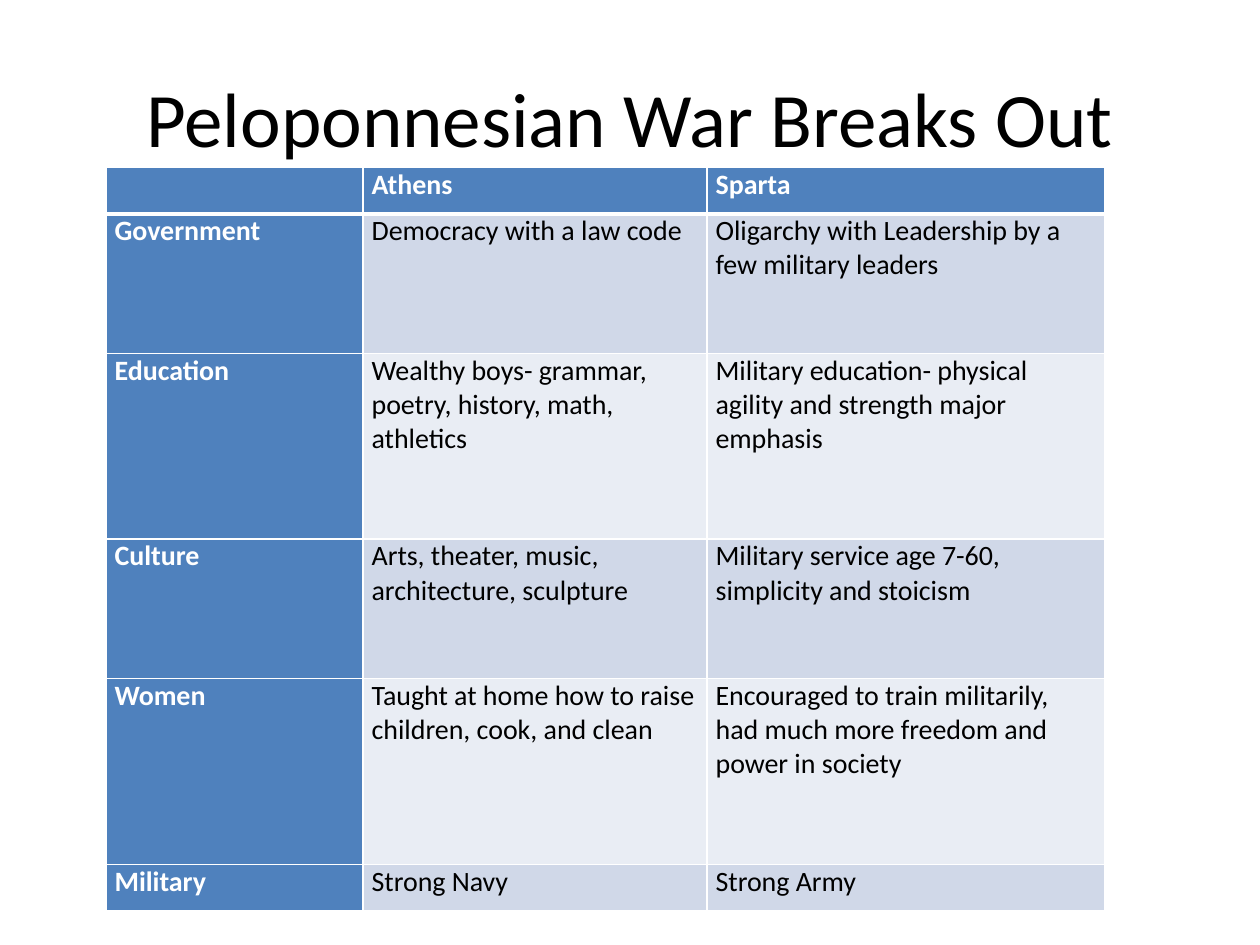
from dataclasses import dataclass

from lxml import etree
from pptx import Presentation
from pptx.dml.color import RGBColor
from pptx.enum.text import MSO_ANCHOR, PP_ALIGN
from pptx.oxml.ns import qn
from pptx.util import Inches, Pt

CENTER = PP_ALIGN.CENTER
MIDDLE = MSO_ANCHOR.MIDDLE
TITLE_ONLY = 5


@dataclass(frozen=True)
class Theme:
    """Colours, font and type sizes of the slide."""
    font: str = "Calibri"
    title_size: int = 44
    body_size: int = 16
    ink: str = "000000"
    paper: str = "FFFFFF"
    accent: str = "4F81BD"
    bands: tuple = ("D0D8E8", "E9EDF4")
    rule: int = 1
    header_rule: int = 3
    inset: float = 0.07


THEME = Theme()
TITLE_BOX = (0.5, 0.3, 9, 1.25)
TABLE_BOX = (0.84, 1.33, 7.93, 5.9)
COLUMN_WIDTHS = (2.04, 2.73, 3.16)
ROW_LINES = (1, 3, 4, 3, 4, 1)
COMPARISON = (
    ("", "Athens", "Sparta"),
    ("Government", "Democracy with a law code",
     "Oligarchy with Leadership by a few military leaders"),
    ("Education", "Wealthy boys- grammar, poetry, history, math, athletics",
     "Military education- physical agility and strength major emphasis"),
    ("Culture", "Arts, theater, music, architecture, sculpture",
     "Military service age 7-60, simplicity and stoicism"),
    ("Women", "Taught at home how to raise children, cook, and clean",
     "Encouraged to train militarily, had much more freedom and power in society"),
    ("Military", "Strong Navy", "Strong Army"),
)


def set_font(paragraph, size, color, bold=False):
    """Apply the theme font to a paragraph."""
    font = paragraph.font
    font.name, font.size, font.bold = THEME.font, Pt(size), bold
    font.color.rgb = RGBColor.from_string(color)


def set_borders(cell, top, bottom):
    """Draw the four cell edges with the given top and bottom weights."""
    properties = cell._tc.get_or_add_tcPr()
    weights = {"a:lnL": THEME.rule, "a:lnR": THEME.rule, "a:lnT": top, "a:lnB": bottom}
    for tag, weight in weights.items():
        line = etree.SubElement(properties, qn(tag), w=str(Pt(weight)))
        fill = etree.SubElement(line, qn("a:solidFill"))
        etree.SubElement(fill, qn("a:srgbClr"), val=THEME.paper)


def add_title(slide, box, text):
    """Place the slide title in its box."""
    title = slide.shapes.title
    title.left, title.top, title.width, title.height = map(Inches, box)
    title.text_frame.text = text
    title.text_frame.vertical_anchor = MIDDLE
    paragraph = title.text_frame.paragraphs[0]
    paragraph.alignment = CENTER
    set_font(paragraph, THEME.title_size, THEME.ink)


def format_cell(cell, row, column, text):
    """Fill one cell and style it by its place in the table."""
    heading = row == 0 or column == 0
    set_borders(cell,
                THEME.header_rule if row == 1 else THEME.rule,
                THEME.header_rule if row == 0 else THEME.rule)
    cell.fill.solid()
    color = THEME.accent if heading else THEME.bands[(row - 1) % 2]
    cell.fill.fore_color.rgb = RGBColor.from_string(color)
    cell.margin_left = cell.margin_right = Inches(THEME.inset)
    cell.margin_top = cell.margin_bottom = 0
    cell.text = text
    set_font(cell.text_frame.paragraphs[0], THEME.body_size,
             THEME.paper if heading else THEME.ink, heading)


def add_comparison(slide, box, rows):
    """Build the comparison table inside its box."""
    frame = slide.shapes.add_table(len(rows), len(COLUMN_WIDTHS), *map(Inches, box))
    table = frame.table
    for column, width in zip(table.columns, COLUMN_WIDTHS):
        column.width = Inches(box[2] * width / sum(COLUMN_WIDTHS))
    for row, lines in zip(table.rows, ROW_LINES):
        row.height = Inches(box[3] * lines / sum(ROW_LINES))
    for row, texts in enumerate(rows):
        for column, text in enumerate(texts):
            format_cell(table.cell(row, column), row, column, text)


def main():
    """Create and save the presentation."""
    presentation = Presentation()
    presentation.slide_width, presentation.slide_height = Inches(10), Inches(7.5)
    slide = presentation.slides.add_slide(presentation.slide_layouts[TITLE_ONLY])
    add_title(slide, TITLE_BOX, "Peloponnesian War Breaks Out")
    add_comparison(slide, TABLE_BOX, COMPARISON)
    presentation.save("out.pptx")


if __name__ == "__main__":
    main()
